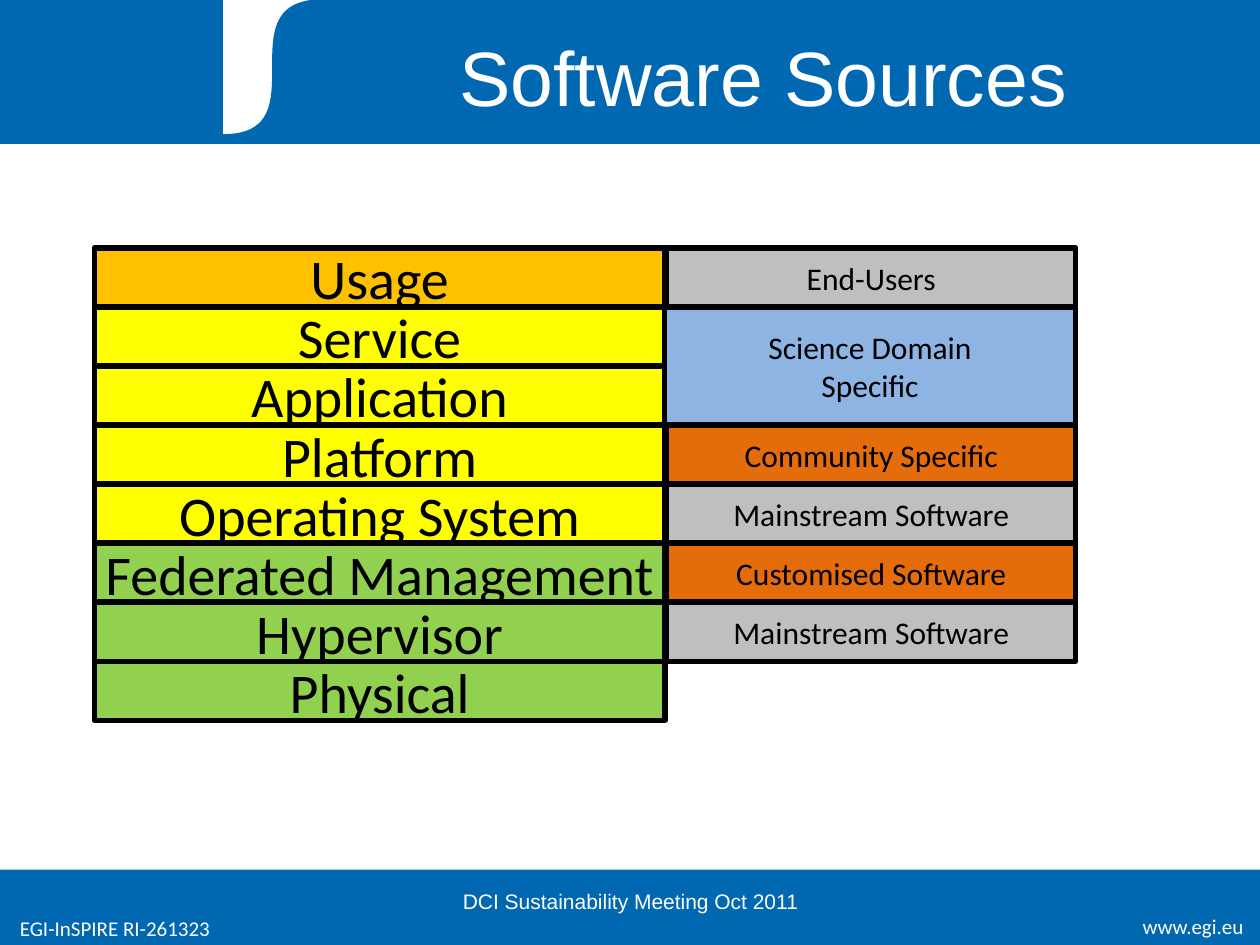
"""Build the Software Sources slide: a layered stack beside the origin of each layer."""
from dataclasses import dataclass

from pptx import Presentation
from pptx import util as u
from pptx.dml.color import RGBColor
from pptx.enum import shapes, text

COLORS = {
    "brand": "0067B1", "white": "FFFFFF", "black": "000000",
    "amber": "FFC000", "yellow": "FFFF00", "green": "92D050",
    "gray": "BFBFBF", "blue": "8EB4E3", "orange": "E46C0A",
}
STACK_TOP, ROW_HEIGHT = 5.0, 1.19
LAYER_LEFT, LAYER_WIDTH = 1.9, 11.51
SOURCE_LEFT, SOURCE_RIGHT = 13.44, 21.69
HEADER_HEIGHT = 2.9
CURVE = ((4.5, 2.72), (6.5, 2.72), (4.5, 0), (6.5, 0))
CURVE_RIGHT, CURVE_STEPS = 9.5, 40


@dataclass(frozen=True)
class Layer:
    name: str
    color: str


@dataclass(frozen=True)
class Source:
    name: str
    color: str
    row: int
    rows: int = 1
    left: float = SOURCE_LEFT


@dataclass(frozen=True)
class Caption:
    words: str
    left: float
    top: float
    width: float
    height: float
    font: str
    align: text.PP_ALIGN
    anchor: text.MSO_ANCHOR = text.MSO_ANCHOR.TOP


LAYERS = (
    Layer("Usage", "amber"),
    Layer("Service", "yellow"),
    Layer("Application", "yellow"),
    Layer("Platform", "yellow"),
    Layer("Operating System", "yellow"),
    Layer("Federated Management", "green"),
    Layer("Hypervisor", "green"),
    Layer("Physical", "green"),
)
SOURCES = (
    Source("Community Specific", "orange", 3),
    Source("Mainstream Software", "gray", 4),
    Source("Mainstream Software", "gray", 6),
    Source("Customised Software", "orange", 5),
    Source("Science Domain\nSpecific", "blue", 1, 2, 13.39),
    Source("End-Users", "gray", 0),
)
CAPTIONS = (
    Caption("www.egi.eu", 21.31, 18.29, 4.01, 0.79, "Calibri", text.PP_ALIGN.RIGHT),
    Caption("EGI-InSPIRE RI-261323", 0.15, 18.34, 6.35, 0.79, "Calibri", text.PP_ALIGN.LEFT),
    Caption("DCI Sustainability Meeting Oct 2011", 8.69, 17.65, 8.05, 1.02, "Arial",
            text.PP_ALIGN.CENTER, text.MSO_ANCHOR.MIDDLE),
)


def rgb(name: str) -> RGBColor:
    return RGBColor.from_string(COLORS[name])


def paint(shape, fill: str, line: str, weight: float) -> None:
    shape.shadow.inherit = False
    shape.fill.solid()
    shape.fill.fore_color.rgb = rgb(fill)
    shape.line.color.rgb = rgb(line)
    shape.line.width = u.Pt(weight)


def add_box(page, left: float, top: float, width: float, height: float,
            fill: str, line: str, weight: float):
    box = page.shapes.add_shape(shapes.MSO_SHAPE.RECTANGLE, u.Cm(left), u.Cm(top),
                                u.Cm(width), u.Cm(height))
    paint(box, fill, line, weight)
    return box


def write(shape, words: str, size: float, font: str, color: str,
          align: text.PP_ALIGN = text.PP_ALIGN.CENTER, **frame_format) -> None:
    frame = shape.text_frame
    frame.text = words
    settings = {"vertical_anchor": text.MSO_ANCHOR.MIDDLE, "word_wrap": True, **frame_format}
    for name, value in settings.items():
        setattr(frame, name, value)
    for para in frame.paragraphs:
        para.alignment = align
        for name, value in {"size": u.Pt(size), "name": font}.items():
            setattr(para.font, name, value)
        para.font.color.rgb = rgb(color)


def curve_point(step: int) -> tuple[float, float]:
    t = step / CURVE_STEPS
    weights = ((1 - t) ** 3, 3 * t * (1 - t) ** 2, 3 * t * t * (1 - t), t ** 3)
    return tuple(sum(w * point[axis] for w, point in zip(weights, CURVE)) for axis in (0, 1))


def add_bands(page) -> None:
    add_box(page, 0, 17.53, 25.4, 1.52, "brand", "brand", 0).line.fill.background()
    add_box(page, 0, 0, 25.4, HEADER_HEIGHT, "brand", "brand", 0.75)
    left, bottom = CURVE[0]
    add_box(page, left, 0, CURVE_RIGHT - left, bottom, "white", "white", 0.75)
    outline = [curve_point(step) for step in range(CURVE_STEPS + 1)]
    outline += [(CURVE_RIGHT, 0), (CURVE_RIGHT, bottom)]
    points = [(u.Cm(x), u.Cm(y)) for x, y in outline]
    builder = page.shapes.build_freeform(*points[0])
    builder.add_line_segments(points[1:], close=True)
    paint(builder.convert_to_shape(), "brand", "brand", 0.75)


def add_title(page) -> None:
    title = page.shapes.title
    place = {"left": 5.89, "top": 0.33, "width": 19.0, "height": 2.41}
    for name, value in place.items():
        setattr(title, name, u.Cm(value))
    write(title, "Software Sources", 44, "Arial", "white")
    page.shapes._spTree.append(title._element)


def add_layer(page, row: int, layer: Layer) -> None:
    box = add_box(page, LAYER_LEFT, STACK_TOP + row * ROW_HEIGHT, LAYER_WIDTH, ROW_HEIGHT,
                  layer.color, "black", 3)
    margins = {f"margin_{side}": 0 for side in ("left", "right", "top", "bottom")}
    write(box, layer.name, 32, "Calibri", "black", **margins)


def add_source(page, source: Source) -> None:
    box = add_box(page, source.left, STACK_TOP + source.row * ROW_HEIGHT,
                  SOURCE_RIGHT - source.left, source.rows * ROW_HEIGHT,
                  source.color, "black", 3)
    write(box, source.name, 18, "Calibri", "black", word_wrap=False)


def add_caption(page, caption: Caption) -> None:
    box = page.shapes.add_textbox(u.Cm(caption.left), u.Cm(caption.top),
                                  u.Cm(caption.width), u.Cm(caption.height))
    write(box, caption.words, 12, caption.font, "white", caption.align,
          vertical_anchor=caption.anchor)


def main() -> None:
    deck = Presentation()
    deck.slide_width, deck.slide_height = u.Cm(25.4), u.Cm(19.05)
    page = deck.slides.add_slide(deck.slide_layouts[5])
    add_bands(page)
    add_title(page)
    for row, layer in enumerate(LAYERS):
        add_layer(page, row, layer)
    for source in SOURCES:
        add_source(page, source)
    for caption in CAPTIONS:
        add_caption(page, caption)
    deck.save("out.pptx")


if __name__ == "__main__":
    main()
